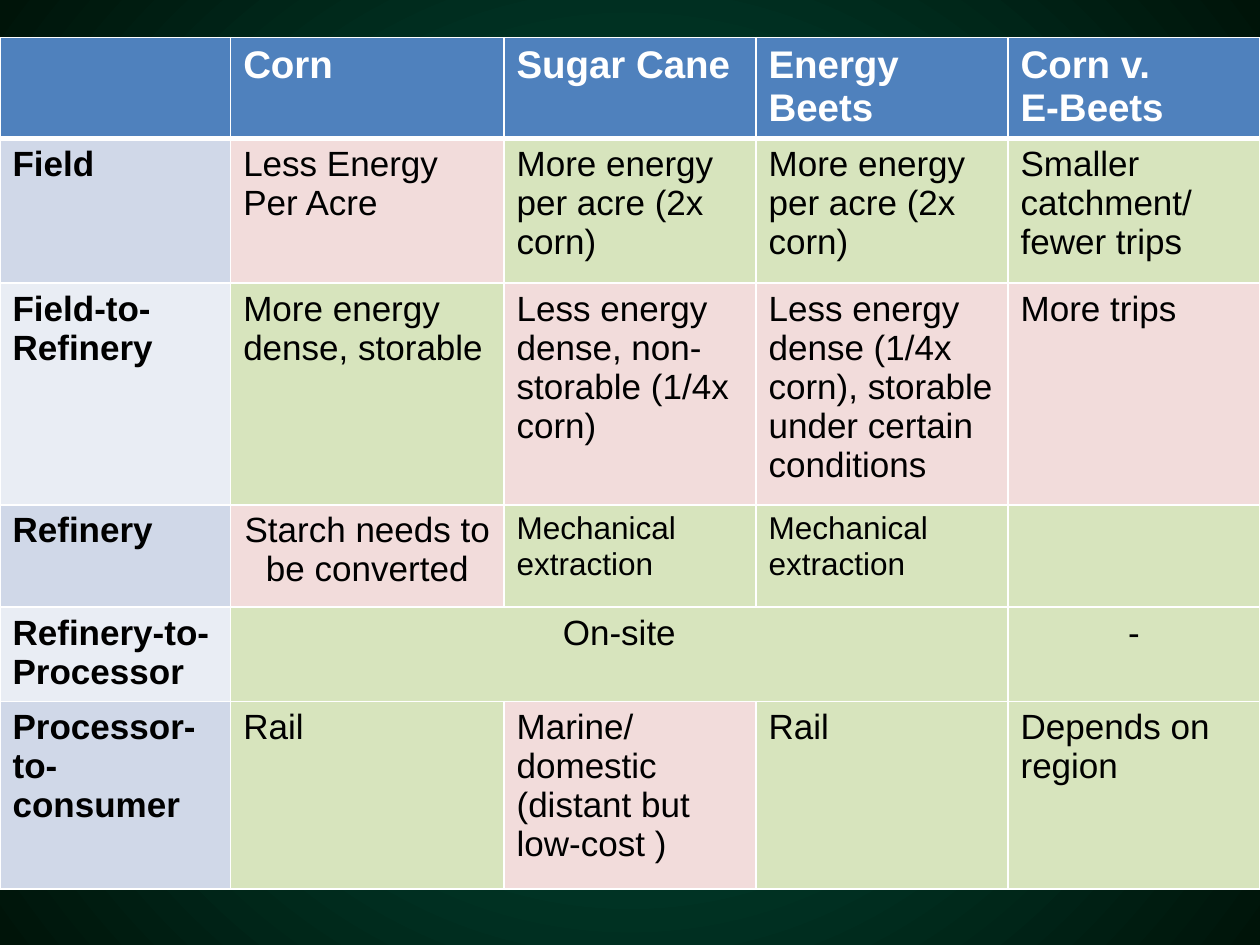
"""Build a slide comparing the supply chains of three biofuel crops."""
from lxml import etree
from pptx import Presentation
from pptx import util as u
from pptx.dml.color import RGBColor
from pptx.enum import text
from pptx.oxml import parse_xml
from pptx.oxml.ns import nsdecls

WHITE = RGBColor(0xFF, 0xFF, 0xFF)
BLACK = RGBColor(0x00, 0x00, 0x00)
BLUE = RGBColor(0x4F, 0x81, 0xBD)
GREEN = RGBColor(0xD7, 0xE4, 0xBD)
PINK = RGBColor(0xF2, 0xDC, 0xDB)
STAGE_BANDS = (RGBColor(0xD0, 0xD8, 0xE8), RGBColor(0xE9, 0xED, 0xF4))
GLOW = RGBColor(0x00, 0x56, 0x43)
NIGHT = RGBColor(0x00, 0x14, 0x09)

HEADINGS = ["", "Corn", "Sugar Cane", "Energy Beets", "Corn v.\vE-Beets"]
STAGES = [
    ("Field", [
        ("Less Energy Per Acre", PINK),
        ("More energy per acre (2x corn)", GREEN),
        ("More energy per acre (2x corn)", GREEN),
        ("Smaller catchment/ fewer trips", GREEN)]),
    ("Field-to-Refinery", [
        ("More energy dense, storable", GREEN),
        ("Less energy dense, non-storable (1/4x corn)", PINK),
        ("Less energy dense (1/4x corn), storable under certain conditions", PINK),
        ("More trips", PINK)]),
    ("Refinery", [
        ("Starch needs to be converted", PINK),
        ("Mechanical extraction", GREEN),
        ("Mechanical extraction", GREEN),
        ("", GREEN)]),
    ("Refinery-to-Processor", [
        ("On-site", GREEN), ("", GREEN), ("", GREEN), ("-", GREEN)]),
    ("Processor-to-consumer", [
        ("Rail", GREEN),
        ("Marine/ domestic\n(distant but low-cost )", PINK),
        ("Rail", GREEN),
        ("Depends on region", GREEN)]),
]
CENTERED = {"Starch needs to be converted", "On-site", "-"}
SMALLER = {"Mechanical extraction"}
COLUMN_WIDTHS = [4.65, 5.51, 5.08, 5.08, 5.08]
ROW_HEIGHTS = [2.03, 2.92, 4.47, 2.06, 1.9, 3.78]
TABLE_TOP = 0.76


def paint_background(page):
    fill = page.background.fill
    fill.gradient()
    for stop, color, position in zip(fill.gradient_stops, (GLOW, NIGHT), (0.02, 1)):
        stop.color.rgb = color
        stop.position = position
    gradient = page.background._cSld.bg.bgPr.find(".//{*}gradFill")
    gradient.replace(gradient.find("{*}lin"), parse_xml(
        f'<a:path {nsdecls("a")} path="circle">'
        '<a:fillToRect l="50000" t="50000" r="50000" b="50000"/></a:path>'))


def add_borders(cell, top=1, bottom=1):
    properties = cell._tc.get_or_add_tcPr()
    for side, width in (("L", 1), ("R", 1), ("T", top), ("B", bottom)):
        line = parse_xml(f'<a:ln{side} {nsdecls("a")} w="{u.Pt(width)}"><a:solidFill/></a:ln{side}>')
        color = etree.SubElement(line[0], line[0].tag.replace("solidFill", "srgbClr"))
        color.set("val", str(WHITE))
        properties.append(line)


def write_cell(cell, words, fill, size=20, color=BLACK, bold=False, centered=False):
    cell.fill.solid()
    cell.fill.fore_color.rgb = fill
    cell.text_frame.text = words
    for para in cell.text_frame.paragraphs:
        para.alignment = text.PP_ALIGN.CENTER if centered else text.PP_ALIGN.LEFT
        for span in para.runs:
            span.font.name = "Arial"
            span.font.size = u.Pt(size)
            span.font.bold = bold
            span.font.color.rgb = color


def main():
    deck = Presentation()
    deck.slide_width, deck.slide_height = u.Cm(25.4), u.Cm(19.05)
    page = deck.slides.add_slide(deck.slide_layouts[6])
    paint_background(page)

    table = page.shapes.add_table(
        len(ROW_HEIGHTS), len(COLUMN_WIDTHS), 0, u.Cm(TABLE_TOP),
        u.Cm(sum(COLUMN_WIDTHS)), u.Cm(sum(ROW_HEIGHTS))).table
    for column, width in zip(table.columns, COLUMN_WIDTHS):
        column.width = u.Cm(width)
    for row, height in zip(table.rows, ROW_HEIGHTS):
        row.height = u.Cm(height)

    for index, row in enumerate(table.rows):
        for cell in row.cells:
            add_borders(cell, top=3 if index == 1 else 1, bottom=3 if index == 0 else 1)

    for column, heading in enumerate(HEADINGS):
        write_cell(table.cell(0, column), heading, BLUE, size=22, color=WHITE, bold=True)
    for row, (stage, entries) in enumerate(STAGES, start=1):
        write_cell(table.cell(row, 0), stage, STAGE_BANDS[(row - 1) % 2], bold=True)
        for column, (words, fill) in enumerate(entries, start=1):
            write_cell(table.cell(row, column), words, fill,
                       size=18 if words in SMALLER else 20, centered=words in CENTERED)
    table.cell(4, 1).merge(table.cell(4, 3))

    deck.save("out.pptx")


if __name__ == "__main__":
    main()
